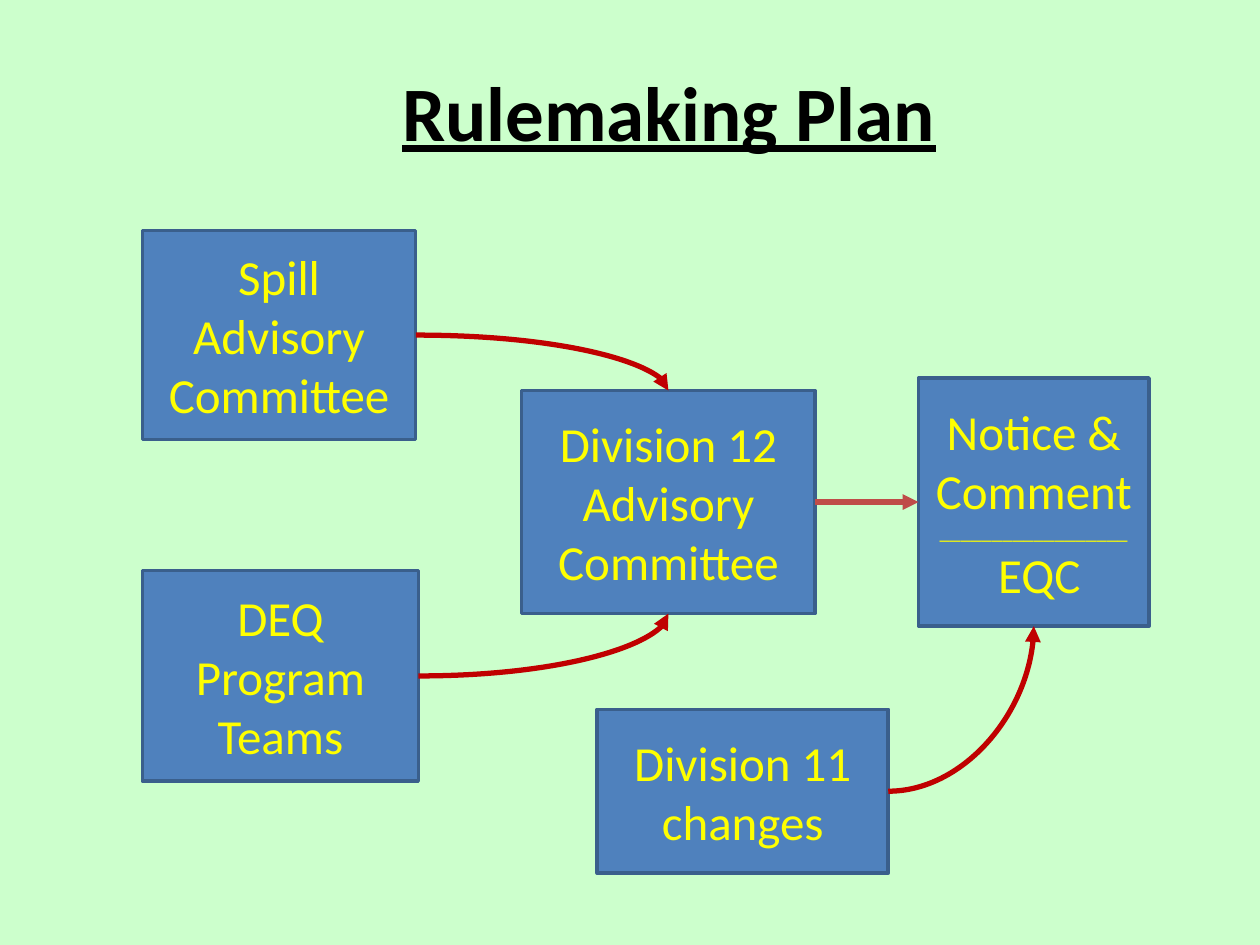
from lxml import etree
from pptx import Presentation
from pptx.dml.color import RGBColor
from pptx.enum.shapes import MSO_CONNECTOR, MSO_SHAPE
from pptx.enum.text import MSO_ANCHOR, PP_ALIGN
from pptx.oxml.ns import qn
from pptx.util import Inches, Pt

RECTANGLE = MSO_SHAPE.RECTANGLE
STRAIGHT, CURVE = MSO_CONNECTOR.STRAIGHT, MSO_CONNECTOR.CURVE
CENTER, MIDDLE = PP_ALIGN.CENTER, MSO_ANCHOR.MIDDLE
TOP, LEFT, BOTTOM, RIGHT = range(4)  # connection sites of a rectangle

# Content
WIDTH, HEIGHT = 10, 7.5
FONT = "Calibri"
COLORS = {
    "background": "CCFFCC", "title": "000000", "box": "4F81BD",
    "border": "3A5F8C", "label": "FFFF00", "curve": "C00000", "straight": "BF4C48",
}
TITLE = ("Rulemaking Plan", 44)
TITLE_AREA = (0.81, 0.25, 9, 1.25)

# Box name: (left, top, width, height), [(text, size), ...]
BOXES = {
    "notice": ((7.29, 3, 1.83, 1.97),
               [("Notice & Comment", 28), ("_" * 18, 12), (" EQC", 28)]),
    "teams": ((1.13, 4.53, 2.19, 1.67), [("DEQ Program Teams", 28)]),
    "spill": ((1.13, 1.83, 2.17, 1.66), [("Spill Advisory Committee", 28)]),
    "division 12": ((4.14, 3.1, 2.33, 1.77), [("Division 12 Advisory Committee", 28)]),
    "division 11": ((4.74, 5.63, 2.31, 1.3), [("Division 11 changes", 28)]),
}
# Every arrow leaves the right side of its first box
ARROWS = [
    ("division 12", "notice", LEFT, "straight"),
    ("division 11", "notice", BOTTOM, "curve"),
    ("spill", "division 12", TOP, "curve"),
    ("teams", "division 12", BOTTOM, "curve"),
]


def color(name):
    return RGBColor.from_string(COLORS[name])


def write(text_frame, lines, color_name, emphasis=False):
    text_frame.word_wrap = True
    text_frame.vertical_anchor = MIDDLE
    for index, (text, size) in enumerate(lines):
        paragraph = text_frame.add_paragraph() if index else text_frame.paragraphs[0]
        paragraph.alignment = CENTER
        run = paragraph.add_run()
        run.text = text
        run.font.name = FONT
        run.font.size = Pt(size)
        run.font.color.rgb = color(color_name)
        if emphasis:
            run.font.bold = run.font.underline = True


def add_box(slide, area, lines):
    box = slide.shapes.add_shape(RECTANGLE, *map(Inches, area))
    box.shadow.inherit = False
    box.fill.solid()
    box.fill.fore_color.rgb = color("box")
    box.line.color.rgb = color("border")
    box.line.width = Pt(2)
    write(box.text_frame, lines, "label")
    return box


def add_arrow(slide, source, target, site, kind):
    arrow = slide.shapes.add_connector(CURVE if kind == "curve" else STRAIGHT, 0, 0, 0, 0)
    arrow.begin_connect(source, RIGHT)
    arrow.end_connect(target, site)
    arrow.line.color.rgb = color(kind)
    arrow.line.width = Pt(3)
    properties = arrow.element.spPr
    if kind == "curve":  # a single bend: sideways, then up or down
        properties.find(qn("a:prstGeom")).set("prst", "curvedConnector2")
    etree.SubElement(properties.find(qn("a:ln")), qn("a:tailEnd"), type="triangle")
    etree.SubElement(properties, qn("a:effectLst"))


def main():
    presentation = Presentation()
    presentation.slide_width, presentation.slide_height = Inches(WIDTH), Inches(HEIGHT)
    slide = presentation.slides.add_slide(presentation.slide_layouts[6])
    slide.background.fill.solid()
    slide.background.fill.fore_color.rgb = color("background")

    # Title
    title = slide.shapes.add_textbox(*map(Inches, TITLE_AREA))
    write(title.text_frame, [TITLE], "title", emphasis=True)

    # Flow chart
    boxes = {name: add_box(slide, *box) for name, box in BOXES.items()}
    for source, target, site, kind in ARROWS:
        add_arrow(slide, boxes[source], boxes[target], site, kind)

    presentation.save("out.pptx")


if __name__ == "__main__":
    main()
